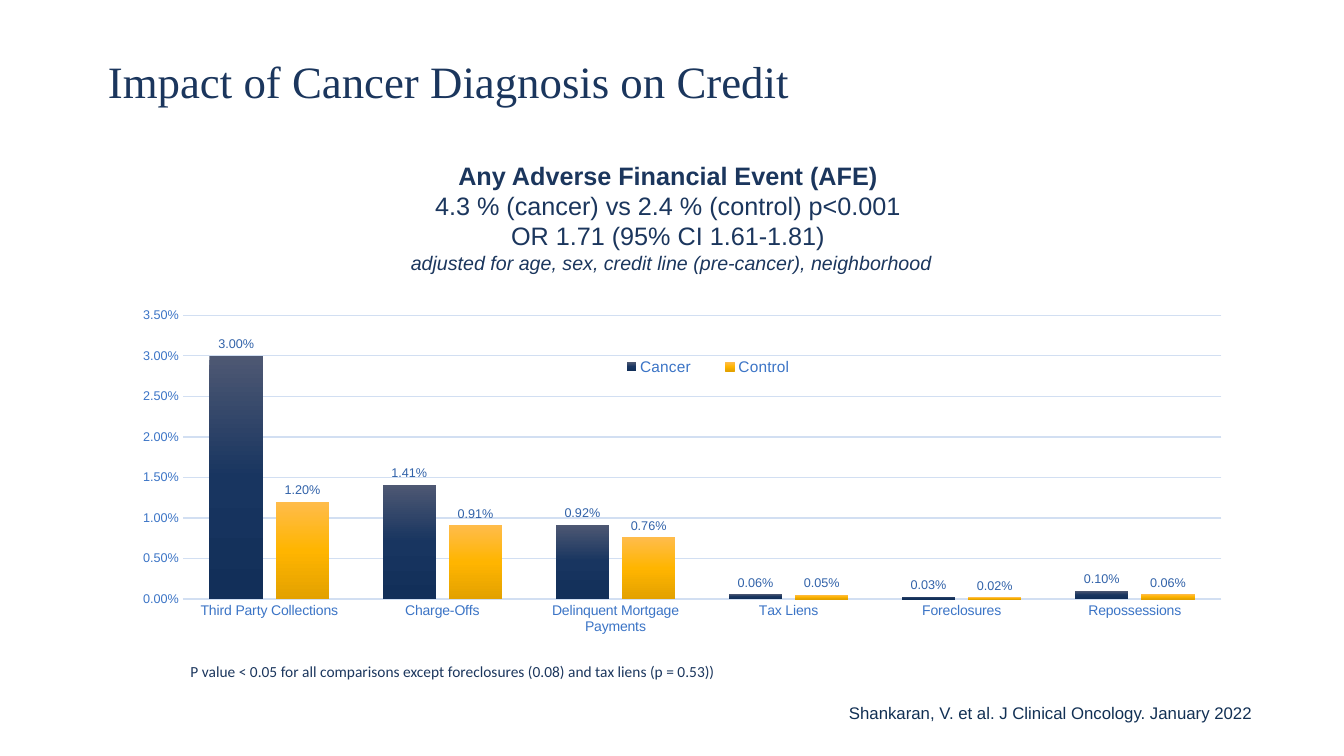
from dataclasses import dataclass

from pptx import Presentation
from pptx.chart.data import CategoryChartData
from pptx.dml.color import RGBColor
from pptx.enum.chart import XL_CHART_TYPE, XL_LABEL_POSITION, XL_LEGEND_POSITION, XL_TICK_MARK
from pptx.enum.text import MSO_ANCHOR, PP_ALIGN
from pptx.oxml import parse_xml
from pptx.oxml.ns import nsdecls
from pptx.util import Pt

PX = 9144  # 100 px to the inch


@dataclass(frozen=True)
class Theme:
    navy: str = "1B365D"
    source: str = "123054"
    axis: str = "3B74C6"
    label: str = "3162A9"
    grid: str = "D2DFF2"
    cancer: tuple = ("4E5873", "183560", "122F59")
    control: tuple = ("FFBC4B", "FFB500", "E3A100")
    serif: str = "Times New Roman"
    sans: str = "Arial"
    note: str = "Calibri"
    title_size: int = 32
    lead_size: int = 18
    sub_size: int = 14
    source_size: int = 12
    note_size: int = 11
    legend_size: int = 11
    category_size: int = 10
    value_size: int = 9


T = Theme()
PERCENT = "0.00%"
CATEGORIES = ("Third Party Collections", "Charge-Offs", "Delinquent Mortgage Payments",
              "Tax Liens", "Foreclosures", "Repossessions")
SERIES = (
    ("Cancer", (0.03, 0.0141, 0.0092, 0.0006, 0.0003, 0.001), T.cancer),
    ("Control", (0.012, 0.0091, 0.0076, 0.0005, 0.0002, 0.0006), T.control),
)


def emu(box):
    return [v * PX for v in box]


def style(font, size, color, name=T.sans):
    font.size, font.name = Pt(size), name
    font.color.rgb = RGBColor.from_string(color)


def add_run(p, text, size, color=T.navy, name=T.sans, bold=False, italic=False):
    r = p.add_run()
    r.text = text
    style(r.font, size, color, name)
    r.font.bold, r.font.italic = bold, italic


def add_title(s, box, text):
    sp = s.shapes.title
    sp.left, sp.top, sp.width, sp.height = emu(box)
    tf = sp.text_frame
    tf.margin_left = tf.margin_right = tf.margin_top = tf.margin_bottom = 0
    tf.vertical_anchor = MSO_ANCHOR.MIDDLE
    p = tf.paragraphs[0]
    p.alignment, p.line_spacing = PP_ALIGN.LEFT, 0.9
    add_run(p, text, T.title_size, name=T.serif)


def add_text(s, box, lines, align=PP_ALIGN.LEFT):
    """Each line is its text and a dict of run formatting."""
    tf = s.shapes.add_textbox(*emu(box)).text_frame
    tf.word_wrap = True
    for i, (text, fmt) in enumerate(lines):
        p = tf.add_paragraph() if i else tf.paragraphs[0]
        p.alignment = align
        add_run(p, text, **fmt)


def manual_layout(x, y, w, h, inner=False):
    target = '<c:layoutTarget val="inner"/>' if inner else ""
    sizes = "".join(f'<c:{k} val="{v}"/>' for k, v in zip("xywh", (x, y, w, h)))
    return parse_xml(
        f'<c:layout {nsdecls("c")}><c:manualLayout>{target}<c:xMode val="edge"/>'
        f'<c:yMode val="edge"/>{sizes}</c:manualLayout></c:layout>')


def set_gradient(ser, colors):
    stops = "".join(f'<a:gs pos="{i * 50000}"><a:srgbClr val="{c}"/></a:gs>'
                    for i, c in enumerate(colors))
    ser._element.get_or_add_spPr().append(parse_xml(
        f'<a:gradFill {nsdecls("a")} rotWithShape="1"><a:gsLst>{stops}</a:gsLst>'
        '<a:lin ang="5400000" scaled="0"/></a:gradFill>'))


def add_event_chart(s, box):
    data = CategoryChartData(number_format=PERCENT)
    data.categories = CATEGORIES
    for name, values, _ in SERIES:
        data.add_series(name, values)
    chart = s.shapes.add_chart(XL_CHART_TYPE.COLUMN_CLUSTERED, *emu(box), data).chart
    style(chart.font, T.category_size, T.navy)
    chart.has_title = False

    # Columns and their labels
    plot = chart.plots[0]
    plot.gap_width, plot.overlap, plot.vary_by_categories = 100, -24, False
    for ser, (_, _, colors) in zip(plot.series, SERIES):
        set_gradient(ser, colors)
        labels = ser.data_labels
        labels.show_value = True
        labels.position = XL_LABEL_POSITION.OUTSIDE_END
        labels.number_format, labels.number_format_is_linked = PERCENT, False
        style(labels.font, T.value_size, T.label)

    # Axes
    cat, val = chart.category_axis, chart.value_axis
    for axis, size in ((cat, T.category_size), (val, T.value_size)):
        axis.major_tick_mark = axis.minor_tick_mark = XL_TICK_MARK.NONE
        style(axis.tick_labels.font, size, T.axis)
    val.minimum_scale, val.maximum_scale, val.major_unit = 0, 0.035, 0.005
    val.tick_labels.number_format = PERCENT
    val.tick_labels.number_format_is_linked = False
    val.format.line.fill.background()
    for line, width in ((cat.format.line, 1), (val.major_gridlines.format.line, 0.75)):
        line.color.rgb = RGBColor.from_string(T.grid)
        line.width = Pt(width)

    # Legend inside the plot area
    chart.has_legend = True
    legend = chart.legend
    legend.position, legend.include_in_layout = XL_LEGEND_POSITION.BOTTOM, False
    style(legend.font, T.legend_size, T.axis)
    legend._element.find("{*}legendPos").addnext(manual_layout(0.43, 0.14, 0.2, 0.07))

    area = chart._chartSpace.chart.plotArea
    for old in area.findall("{*}layout"):
        area.remove(old)
    area.insert(0, manual_layout(0.055, 0.031, 0.939, 0.795, inner=True))


def build_slide(prs):
    s = prs.slides.add_slide(prs.slide_layouts[5])
    add_title(s, (107, 33, 1119, 100), "Impact of Cancer Diagnosis on Credit")
    add_event_chart(s, (121, 302, 1097, 354))
    # Footnote
    add_text(s, (179, 652, 689, 29), [
        ("P value < 0.05 for all comparisons except foreclosures (0.08) and tax liens (p = 0.53))",
         dict(size=T.note_size, name=T.note))])
    # Key result
    add_text(s, (163, 154, 1006, 148), [
        ("Any Adverse Financial Event (AFE) ", dict(size=T.lead_size, bold=True)),
        ("4.3 % (cancer) vs 2.4 % (control) p<0.001 ", dict(size=T.lead_size)),
        ("OR 1.71 (95% CI 1.61-1.81) ", dict(size=T.lead_size)),
        ("adjusted for age, sex, credit line (pre-cancer), neighborhood",
         dict(size=T.sub_size, italic=True)),
    ], PP_ALIGN.CENTER)
    # Citation
    add_text(s, (707, 692, 545, 25), [
        ("Shankaran, V. et al. J Clinical Oncology. January 2022",
         dict(size=T.source_size, color=T.source))], PP_ALIGN.RIGHT)


def main():
    prs = Presentation()
    prs.slide_width, prs.slide_height = emu((1333, 750))
    build_slide(prs)
    prs.save("out.pptx")


if __name__ == "__main__":
    main()
